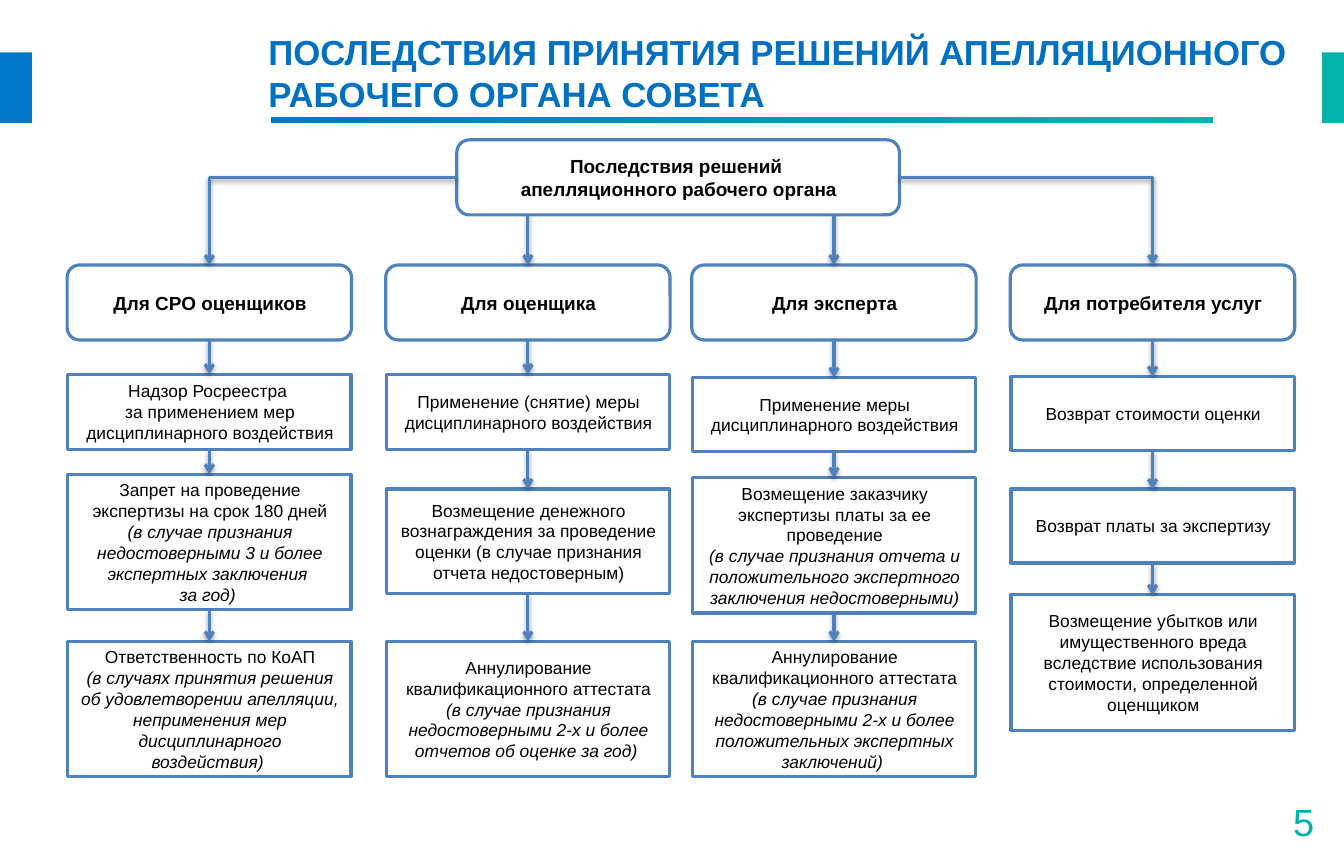
"""Builds the slide on consequences of the appeal body's decisions."""
from lxml import etree
from pptx import Presentation
from pptx.dml.color import RGBColor
from pptx.enum.shapes import MSO_CONNECTOR, MSO_SHAPE
from pptx.enum.text import MSO_ANCHOR, MSO_AUTO_SIZE, PP_ALIGN
from pptx.oxml import parse_xml
from pptx.oxml.ns import nsdecls, qn
from pptx.util import Inches, Pt

TITLE = "ПОСЛЕДСТВИЯ ПРИНЯТИЯ РЕШЕНИЙ АПЕЛЛЯЦИОННОГО \nРАБОЧЕГО ОРГАНА СОВЕТА"
ROOT = "Последствия решений \nапелляционного рабочего органа"
PAGE = "5"

COLUMNS = [
    ("Для СРО оценщиков", 1.84, [
        (3.29, 0.66, [[("Надзор Росреестра \nза применением мер дисциплинарного воздействия", False)]]),
        (4.17, 1.19, [[("Запрет на проведение экспертизы на срок 180 дней", False)],
                      [("(в случае признания недостоверными 3 и более экспертных заключения \nза год) ", True)]]),
        (5.64, 1.19, [[("Ответственность по КоАП", False)],
                      [("(в случаях принятия решения об удовлетворении апелляции, "
                        "неприменения мер дисциплинарного воздействия) ", True)]]),
    ]),
    ("Для оценщика", 4.64, [
        (3.29, 0.66, [[("Применение (снятие) меры дисциплинарного воздействия", False)]]),
        (4.3, 0.92, [[("Возмещение денежного вознаграждения за проведение оценки "
                       "(в случае признания отчета недостоверным)", False)]]),
        (5.64, 1.19, [[("Аннулирование квалификационного аттестата ", False),
                       ("(в случае признания недостоверными 2-х и более отчетов об оценке за год) ", True)]]),
    ]),
    ("Для эксперта", 7.33, [
        (3.32, 0.65, [[("Применение меры дисциплинарного воздействия", False)]]),
        (4.2, 1.19, [[("Возмещение заказчику экспертизы платы за ее проведение", False)],
                     [("(в случае признания отчета и положительного экспертного "
                       "заключения недостоверными)", True)]]),
        (5.64, 1.19, [[("Аннулирование квалификационного аттестата ", False),
                       ("(в случае признания недостоверными 2-х и более "
                        "положительных экспертных заключений) ", True)]]),
    ]),
    ("Для потребителя услуг", 10.13, [
        (3.31, 0.65, [[("Возврат стоимости оценки", False)]]),
        (4.3, 0.65, [[("Возврат платы за экспертизу", False)]]),
        (5.23, 1.19, [[("Возмещение убытков или имущественного вреда вследствие "
                        "использования стоимости, определенной оценщиком", False)]]),
    ]),
]

BLUE = RGBColor(0x00, 0x77, 0xC8)
TEAL = RGBColor(0x00, 0xB2, 0xA9)
TITLE_BLUE = RGBColor(0x00, 0x70, 0xC0)
OUTLINE = RGBColor(0x4F, 0x81, 0xBD)
BLACK = RGBColor(0, 0, 0)
WHITE = RGBColor(0xFF, 0xFF, 0xFF)
RECT, ROUNDED = MSO_SHAPE.RECTANGLE, MSO_SHAPE.ROUNDED_RECTANGLE
STRAIGHT = MSO_CONNECTOR.STRAIGHT
LEFT, CENTER, RIGHT = PP_ALIGN.LEFT, PP_ALIGN.CENTER, PP_ALIGN.RIGHT
TOP, MIDDLE = MSO_ANCHOR.TOP, MSO_ANCHOR.MIDDLE
FIXED_SIZE = MSO_AUTO_SIZE.NONE
SITE_TOP, SITE_LEFT, SITE_BOTTOM, SITE_RIGHT = range(4)

SLIDE_WIDTH, SLIDE_HEIGHT = Inches(189 / 16), Inches(7.5)
ROOT_CENTRE, ROOT_TOP, ROOT_WIDTH = 5.96, 1.23, 3.89
HEAD_TOP, HEAD_WIDTH, HEAD_HEIGHT = 2.33, 2.5, 0.66
STEP_WIDTH = 2.49
BOX_INDENT = Pt(1)
SHADOW = (f'<a:effectLst {nsdecls("a")}><a:outerShdw blurRad="40000" dist="20000" dir="5400000" '
          'rotWithShape="0"><a:srgbClr val="000000"><a:alpha val="38000"/></a:srgbClr>'
          '</a:outerShdw></a:effectLst>')


def write(frame, paragraphs, size, color, align, bold=False, indent=0):
    """Write paragraphs of (text, italic) runs, breaking lines at newlines."""
    frame.word_wrap = True
    for index, runs in enumerate(paragraphs):
        paragraph = frame.add_paragraph() if index else frame.paragraphs[0]
        paragraph.alignment = align
        if indent:
            paragraph._p.get_or_add_pPr().set("marL", str(indent))
        for text, italic in runs:
            for number, line in enumerate(text.split("\n")):
                if number:
                    paragraph.add_line_break()
                run = paragraph.add_run()
                run.text = line
                font = run.font
                font.name, font.size, font.bold, font.italic = "Arial", Pt(size), bold, italic
                font.color.rgb = color


def add_bar(slide, left, top, width, height, color):
    """Add a borderless rectangle."""
    bar = slide.shapes.add_shape(RECT, Inches(left), Inches(top), Inches(width), Inches(height))
    bar.shadow.inherit = False
    bar.line.fill.background()
    bar.fill.solid()
    bar.fill.fore_color.rgb = color
    return bar


def add_box(slide, kind, centre, top, width, height, paragraphs, size, bold=False):
    """Add an outlined box centred on a column."""
    box = slide.shapes.add_shape(kind, Inches(centre - width / 2), Inches(top),
                                 Inches(width), Inches(height))
    box.shadow.inherit = False
    box.fill.solid()
    box.fill.fore_color.rgb = WHITE
    box.line.color.rgb = OUTLINE
    box.line.width = Pt(2)
    box.text_frame.vertical_anchor = MIDDLE
    write(box.text_frame, paragraphs, size, BLACK, CENTER, bold, BOX_INDENT)
    return box


def add_link(slide, start, end, source=None, target=None, arrow=True):
    """Draw a line between points, joined to (box, site) pairs where given."""
    link = slide.shapes.add_connector(STRAIGHT, *start, *end)
    if source:
        link.begin_connect(*source)
    if target:
        link.end_connect(*target)
    link.line.color.rgb = OUTLINE
    link.line.width = Pt(2)
    properties = link._element.spPr
    if arrow:
        etree.SubElement(properties.find(qn("a:ln")), qn("a:tailEnd"), type="arrow")
    properties.append(parse_xml(SHADOW))


def add_title(slide):
    """Format the title and its underline."""
    title = slide.shapes.title
    title.left, title.top, title.width, title.height = map(Inches, (2.36, 0.27, 9.29, 0.48))
    frame = title.text_frame
    frame.margin_left = frame.margin_top = frame.margin_right = frame.margin_bottom = 0
    frame.auto_size = FIXED_SIZE
    frame.vertical_anchor = TOP
    write(frame, [[(TITLE, False)]], 22, TITLE_BLUE, LEFT, bold=True)
    underline = add_bar(slide, 2.38, 1.03, 8.28, 0.05, BLUE)
    underline.fill.gradient()
    underline.fill.gradient_angle = 0
    for stop, color in zip(underline.fill.gradient_stops, (BLUE, TEAL)):
        stop.color.rgb = color


def add_column(slide, root, heading, centre, steps):
    """Add a heading with its chain of steps, linked to the root."""
    head = add_box(slide, ROUNDED, centre, HEAD_TOP, HEAD_WIDTH, HEAD_HEIGHT,
                   [[(heading, False)]], 12, bold=True)
    axis = Inches(centre)
    above = head
    for top, height, paragraphs in steps:
        step = add_box(slide, RECT, centre, top, STEP_WIDTH, height, paragraphs, 11)
        add_link(slide, (axis, above.top + above.height), (axis, step.top),
                 (above, SITE_BOTTOM), (step, SITE_TOP))
        above = step
    if root.left < axis < root.left + root.width:
        turn = (axis, root.top + root.height)
    else:
        turn = (axis, root.top + root.height // 2)
        side = SITE_LEFT if axis < root.left else SITE_RIGHT
        edge = root.left if side == SITE_LEFT else root.left + root.width
        add_link(slide, (edge, turn[1]), turn, source=(root, side), arrow=False)
    add_link(slide, turn, (axis, head.top), target=(head, SITE_TOP))


def main():
    """Build and save the slide."""
    deck = Presentation()
    deck.slide_width = SLIDE_WIDTH
    deck.slide_height = SLIDE_HEIGHT
    slide = deck.slides.add_slide(deck.slide_layouts[5])
    add_bar(slide, 0, 0.46, 0.28, 0.62, BLUE)
    add_bar(slide, 11.62, 0.46, 0.2, 0.62, TEAL)
    add_title(slide)
    page = slide.shapes.add_textbox(Inches(10.67), Inches(6.97), Inches(0.98), Inches(0.4))
    write(page.text_frame, [[(PAGE, False)]], 24, TEAL, RIGHT)
    root = add_box(slide, ROUNDED, ROOT_CENTRE, ROOT_TOP, ROOT_WIDTH, HEAD_HEIGHT,
                   [[(ROOT, False)]], 12, bold=True)
    for heading, centre, steps in COLUMNS:
        add_column(slide, root, heading, centre, steps)
    deck.save("out.pptx")


if __name__ == "__main__":
    main()
